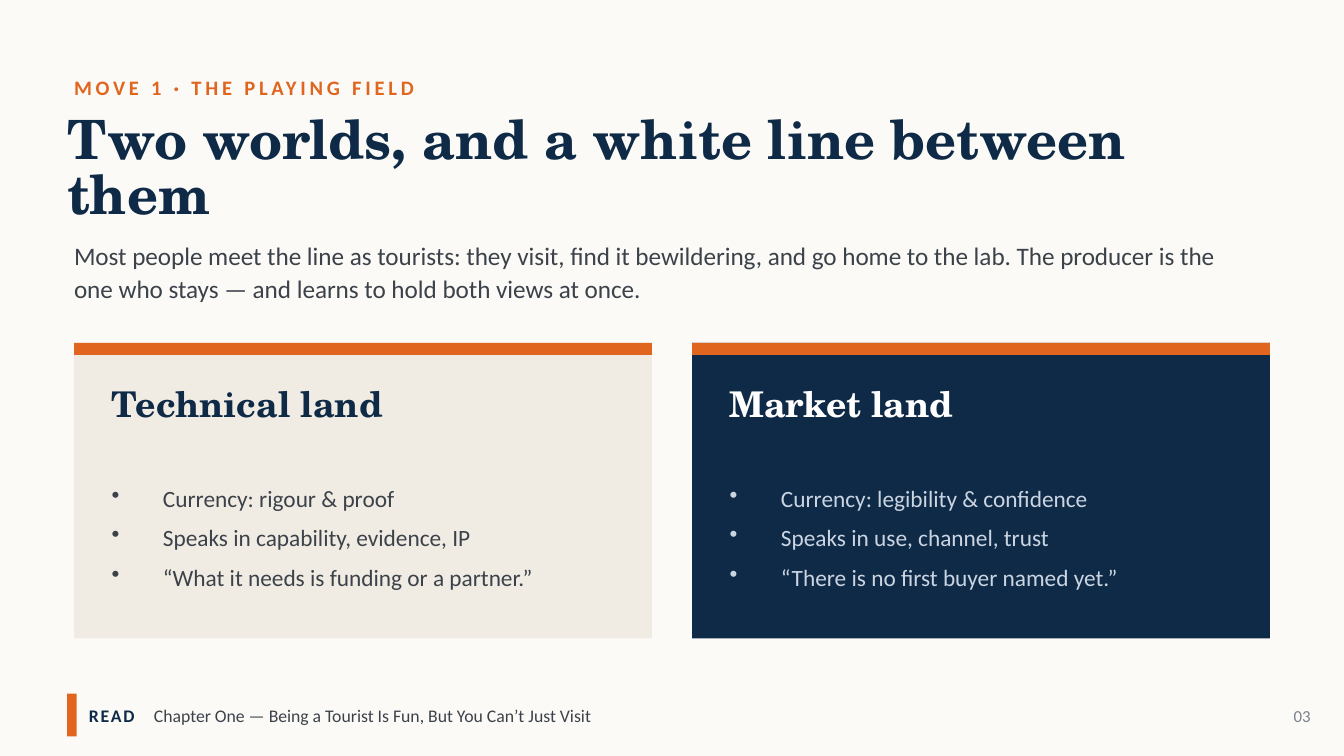
import pptx
import pptx.dml.color
import pptx.enum.shapes
import pptx.enum.text
import pptx.oxml.ns
import pptx.util
from lxml import etree

Cm = pptx.util.Cm
Pt = pptx.util.Pt
qn = pptx.oxml.ns.qn
RGB = pptx.dml.color.RGBColor.from_string

HUES = {
    "paper": "FBFAF7", "navy": "0E2A47", "orange": "E0661F", "slate": "3C424A",
    "sand": "F1ECE3", "white": "FFFFFF", "mist": "CBD5E2", "grey": "7A828B",
}
SERIF = "TeX Gyre Schola"
SANS = "Calibri"


def bar(x, y, w, h, hue):
    """Draw a plain filled rectangle, in cm."""
    box = slide.shapes.add_shape(pptx.enum.shapes.MSO_SHAPE.RECTANGLE,
                                 Cm(x), Cm(y), Cm(w), Cm(h))
    box.shadow.inherit = False
    box.fill.solid()
    box.fill.fore_color.rgb = RGB(HUES[hue])
    box.line.fill.background()


def write(x, y, w, h, text, size, hue, font=SANS, bold=False):
    """Add a text box without insets, in cm, and return its frame."""
    frame = slide.shapes.add_textbox(Cm(x), Cm(y), Cm(w), Cm(h)).text_frame
    frame.word_wrap = True
    frame.vertical_anchor = pptx.enum.text.MSO_ANCHOR.MIDDLE
    frame.margin_left = frame.margin_right = 0
    frame.margin_top = frame.margin_bottom = 0
    frame.text = text
    for para in frame.paragraphs:
        for run in para.runs:
            run.font.name = font
            run.font.size = Pt(size)
            run.font.bold = bold
            run.font.color.rgb = RGB(HUES[hue])
    return frame


deck = pptx.Presentation()
deck.slide_width = Cm(25.4)
deck.slide_height = Cm(14.29)
slide = deck.slides.add_slide(deck.slide_layouts[6])
slide.background.fill.solid()
slide.background.fill.fore_color.rgb = RGB(HUES["paper"])

# Heading
label = write(1.4, 1.27, 15.24, 0.76, "MOVE 1 · THE PLAYING FIELD", 11, "orange", bold=True)
label.paragraphs[0].runs[0].font._element.set("spc", "200")
title = write(1.27, 2.08, 22.86, 2.29, "Two worlds, and a white line between them",
              29, "navy", SERIF, True)
title.paragraphs[0].line_spacing = Pt(29.6)
intro = write(1.4, 4.22, 22.35, 1.78,
              "Most people meet the line as tourists: they visit, find it bewildering, "
              "and go home to the lab. The producer is the one who stays — and learns "
              "to hold both views at once.", 13.5, "slate")
intro.paragraphs[0].line_spacing = Pt(18)

# Two cards
cards = [
    ("Technical land", "sand", "navy", "slate",
     ["Currency: rigour & proof", "Speaks in capability, evidence, IP",
      "“What it needs is funding or a partner.”"]),
    ("Market land", "navy", "white", "mist",
     ["Currency: legibility & confidence", "Speaks in use, channel, trust",
      "“There is no first buyer named yet.”"]),
]
for i, (name, back, head, ink, points) in enumerate(cards):
    left = 1.4 + i * 11.68
    bar(left, 6.48, 10.92, 5.59, back)
    bar(left, 6.48, 10.92, 0.23, "orange")
    write(left + 0.71, 7.06, 9.65, 1.14, name, 19, head, SERIF, True)
    body = write(left + 0.71, 8.51, 9.65, 3.3, "\n".join(points), 12.5, ink)
    for para in body.paragraphs:
        props = para._p.get_or_add_pPr()
        props.set("marL", str(Cm(0.97)))
        props.set("indent", str(-Cm(0.97)))
        etree.SubElement(props, qn("a:buChar"), char="•")
        para.space_after = Pt(6)

# Footer
bar(1.27, 13.11, 0.18, 0.81, "orange")
foot = write(1.68, 13.03, 15.75, 0.97, "READ", 9.5, "navy", bold=True).paragraphs[0]
foot.runs[0].font._element.set("spc", "100")
tabs = etree.SubElement(foot._p.get_or_add_pPr(), qn("a:tabLst"))
etree.SubElement(tabs, qn("a:tab"), pos=str(Cm(1.23)), algn="l")
run = foot.add_run()
run.text = "\tChapter One — Being a Tourist Is Fun, But You Can’t Just Visit"
run.font.name = SANS
run.font.size = Pt(9.5)
run.font.color.rgb = RGB(HUES["slate"])
page = write(23.75, 13.16, 1.02, 0.76, "03", 9, "grey")
page.paragraphs[0].alignment = pptx.enum.text.PP_ALIGN.RIGHT

deck.save("out.pptx")
